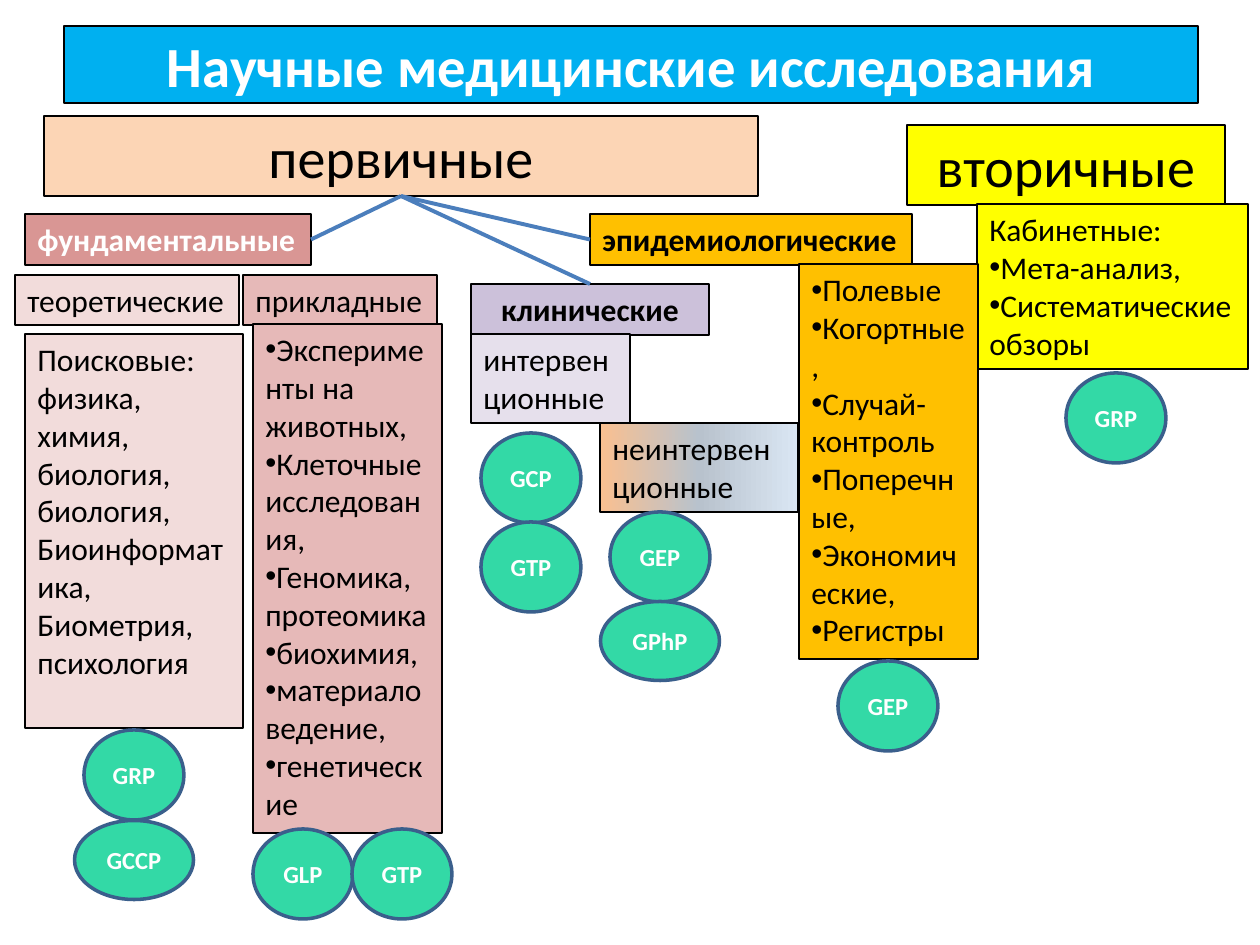
from copy import deepcopy

from lxml.etree import SubElement
from pptx import Presentation
from pptx.dml.color import RGBColor
from pptx.enum.shapes import MSO_CONNECTOR, MSO_SHAPE
from pptx.enum.text import MSO_ANCHOR, MSO_AUTO_SIZE, PP_ALIGN
from pptx.oxml.ns import qn
from pptx.util import Emu, Pt

TITLE = ("Научные медицинские исследования", (64, 26, 1134, 77))

HEADINGS = [
    ("первичные", (44, 116, 714, 80), "peach", "large"),
    ("вторичные", (907, 125, 318, 80), "yellow", "large"),
    ("фундаментальные", (25, 214, 286, 51), "rose", "inverse"),
    ("клинические", (471, 284, 238, 51), "violet", "strong"),
    ("эпидемиологические", (590, 214, 322, 51), "amber", "label"),
]

LISTS = [
    (["Кабинетные:", "• Мета-анализ,", "• Систематические", "обзоры"],
     (977, 204, 271, 165), "yellow", "fitted"),
    (["теоретические"], (15, 275, 224, 50), "pale_rose", "fitted"),
    (["Поисковые:", "физика, химия, биология, биология,", "Биоинформатика,",
      "Биометрия,", "психология"], (25, 334, 218, 394), "pale_rose", "body"),
    (["прикладные"], (243, 275, 194, 50), "pink", "fitted"),
    (["• Эксперименты на животных,", "• Клеточные исследования,",
      "• Геномика, протеомика", "• биохимия,", "• материаловедение,",
      "• генетические"], (253, 324, 189, 509), "pink", "body"),
    (["• Полевые", "• Когортные,", "• Случай-контроль", "• Поперечные,",
      "• Экономические,", "• Регистры"], (799, 264, 179, 395), "amber", "body"),
    (["интервенционные"], (471, 334, 159, 89), "pale_violet", "body"),
    (["неинтервенционные"], (600, 423, 198, 89), "blend", "body"),
]

BRANCHES = [("фундаментальные", 3), ("эпидемиологические", 1), ("клинические", 0)]

STANDARDS = [
    ("GRP", 134, 775), ("GLP", 303, 874), ("GCP", 531, 478), ("GEP", 660, 557),
    ("GEP", 888, 706), ("GPhP", 660, 641), ("GRP", 1116, 418), ("GTP", 402, 874),
    ("GCCP", 134, 860), ("GTP", 531, 567),
]
SHORT_SIZE, LONG_SIZE = (100, 90), (119, 79)

THEME = {
    "font": "Calibri",
    "colors": {
        "black": "000000", "white": "FFFFFF", "blue": "00B0F0", "peach": "FCD5B5",
        "yellow": "FFFF00", "rose": "D99694", "violet": "CCC1DA", "amber": "FFC000",
        "pale_rose": "F2DCDB", "pink": "E6B9B8", "pale_violet": "E6E0EC",
        "green": "33D9A6", "navy": "3A5F8C", "branch": "4B7EBC",
    },
    "gradients": {"blend": [(0, "FAC090"), (0.5, "B8C2CD"), (1, "DAE6F3")]},
    "lines": {"box": 0.75, "branch": 2.25, "standard": 2},
    "text": {
        "title": (32.4, True, "white", PP_ALIGN.CENTER, True),
        "large": (32, False, "black", PP_ALIGN.CENTER, True),
        "strong": (18, True, "black", PP_ALIGN.CENTER, True),
        "label": (18, True, "black", PP_ALIGN.LEFT, False),
        "inverse": (18, True, "white", PP_ALIGN.LEFT, False),
        "body": (18, False, "black", PP_ALIGN.LEFT, True),
        "fitted": (18, False, "black", PP_ALIGN.LEFT, False),
        "standard": (14, True, "white", PP_ALIGN.CENTER, False),
    },
}
BULLET = "• "


def px(value):
    return Emu(round(value * 914400 / 126))


def color(name):
    return RGBColor.from_string(THEME["colors"][name])


def assign(target, values):
    for name, value in values.items():
        setattr(target, name, value)


def place(shape, box):
    assign(shape, dict(zip(("left", "top", "width", "height"), map(px, box))))


def paint_gradient(shape, stops):
    shape.fill.gradient()
    shape.fill.gradient_angle = 0
    stop_list = shape._element.spPr.find(".//" + qn("a:gsLst"))
    stop_list.insert(1, deepcopy(stop_list[0]))
    for stop, (position, value) in zip(shape.fill.gradient_stops, stops):
        stop.position = position
        stop.color.rgb = RGBColor.from_string(value)


def paint(shape, fill, line, line_kind):
    if fill in THEME["gradients"]:
        paint_gradient(shape, THEME["gradients"][fill])
    else:
        shape.fill.solid()
        shape.fill.fore_color.rgb = color(fill)
    shape.line.color.rgb = color(line)
    shape.line.width = Pt(THEME["lines"][line_kind])


def write(shape, lines, style, anchor=MSO_ANCHOR.TOP):
    size, bold, text_color, alignment, wrap = THEME["text"][style]
    frame = shape.text_frame
    frame.text = "\n".join(line.removeprefix(BULLET) for line in lines)
    assign(frame, {"auto_size": MSO_AUTO_SIZE.NONE, "word_wrap": wrap,
                   "vertical_anchor": anchor})
    for line, paragraph in zip(lines, frame.paragraphs):
        paragraph.alignment = alignment
        if line.startswith(BULLET):
            properties = paragraph._p.get_or_add_pPr()
            SubElement(properties, qn("a:buFont"), typeface="Arial")
            SubElement(properties, qn("a:buChar"), char=BULLET.strip())
        for run in paragraph.runs:
            assign(run.font, {"name": THEME["font"], "size": Pt(size), "bold": bold})
            run.font.color.rgb = color(text_color)


def add_box(slide, lines, box, fill, style):
    shape = slide.shapes.add_textbox(*map(px, box))
    paint(shape, fill, "black", "box")
    write(shape, lines, style)
    return shape


def add_branch(slide, parent, child, site):
    connector = slide.shapes.add_connector(MSO_CONNECTOR.STRAIGHT, 0, 0, 0, 0)
    connector.begin_connect(parent, 2)
    connector.end_connect(child, site)
    connector.line.color.rgb = color("branch")
    connector.line.width = Pt(THEME["lines"]["branch"])
    SubElement(connector._element.spPr, qn("a:effectLst"))


def add_standard(slide, name, center_x, center_y):
    width, height = LONG_SIZE if len(name) > 3 else SHORT_SIZE
    box = (center_x - width / 2, center_y - height / 2, width, height)
    shape = slide.shapes.add_shape(MSO_SHAPE.OVAL, *map(px, box))
    shape.shadow.inherit = False
    paint(shape, "green", "navy", "standard")
    write(shape, [name], "standard", MSO_ANCHOR.MIDDLE)


def main():
    presentation = Presentation()
    assign(presentation, {"slide_width": px(1260), "slide_height": px(945)})
    slide = presentation.slides.add_slide(presentation.slide_layouts[5])

    title_text, title_box = TITLE
    title = slide.shapes.title
    place(title, title_box)
    paint(title, "blue", "black", "box")
    write(title, [title_text], "title", MSO_ANCHOR.MIDDLE)

    headings = {text: add_box(slide, [text], *rest) for text, *rest in HEADINGS}
    for entry in LISTS:
        add_box(slide, *entry)
    for child, site in BRANCHES:
        add_branch(slide, headings["первичные"], headings[child], site)
    for standard in STANDARDS:
        add_standard(slide, *standard)

    presentation.save("out.pptx")


if __name__ == "__main__":
    main()
